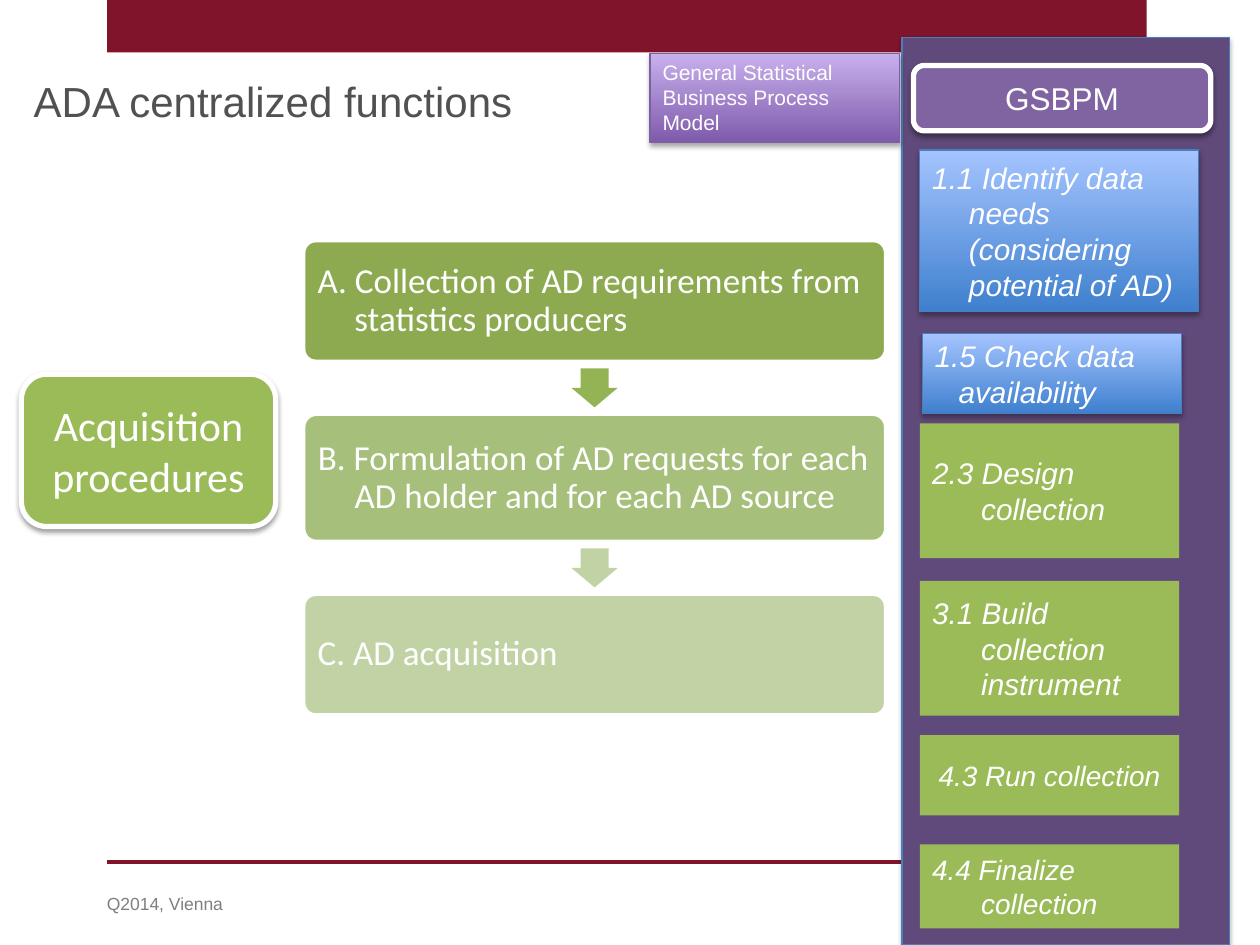
import pptx
import pptx.util
import pptx.dml.color
import pptx.enum.shapes
import pptx.enum.text
import pptx.oxml
import pptx.oxml.ns
import lxml.etree

Pt = pptx.util.Pt
Kind = pptx.enum.shapes.MSO_SHAPE
Anchor = pptx.enum.text.MSO_ANCHOR
Align = pptx.enum.text.PP_ALIGN
qn = pptx.oxml.ns.qn


class Theme:
    wine = "7F142A"
    white = "FFFFFF"
    plum = "604A7B"
    violet = "8064A2"
    edge = "4B7EBC"
    rim = "7D60A0"
    green = "9BBB59"
    ink = "505150"
    gray = "7F7F7F"
    blue = ("3F80CE", "A4C4FF")
    lilac = ("7F5BAB", "C8B0ED")
    steps = ("8DAA51", "A6BF7A", "C1D3A5")
    arrows = ("94B355", "C1D3A4")
    sans = "Arial"
    body = "Calibri"
    head, step, label, large, small, note, foot = 24, 20, 18, 17, 16, 12, 10


def color(code):
    return pptx.dml.color.RGBColor.from_string(code)


def box(area, fill=None, line=None, width=0.75, shade=0, kind=Kind.RECTANGLE,
        text="", size=12, font=Theme.sans, ink=Theme.white, hang=0,
        align=Align.LEFT, anchor=Anchor.MIDDLE, italic=False):
    left, top, wide, high = map(Pt, area)
    if fill:
        shape = shapes.add_shape(kind, left, top, wide, high)
        if isinstance(fill, tuple):
            shape.fill.gradient()
            shape.fill.gradient_angle = 90
            for stop, code in zip(shape.fill.gradient_stops, fill):
                stop.color.rgb = color(code)
        else:
            shape.fill.solid()
            shape.fill.fore_color.rgb = color(fill)
        if line:
            shape.line.color.rgb = color(line)
            shape.line.width = Pt(width)
        else:
            shape.line.fill.background()
        shape.shadow.inherit = False
    else:
        shape = shapes.add_textbox(left, top, wide, high)
    if shade:
        effects = shape._element.spPr.find(qn("a:effectLst"))
        glow = lxml.etree.SubElement(
            effects, qn("a:outerShdw"), blurRad=str(Pt(3.1)),
            dist=str(Pt(1.8)), dir="5400000", rotWithShape="0")
        tone = lxml.etree.SubElement(glow, qn("a:srgbClr"), val="000000")
        lxml.etree.SubElement(tone, qn("a:alpha"), val=str(shade * 1000))
    if text:
        frame = shape.text_frame
        frame.word_wrap = True
        frame.vertical_anchor = anchor
        para = frame.paragraphs[0]
        para.text = text
        para.alignment = align
        if hang:
            props = para._p.get_or_add_pPr()
            props.set("marL", str(Pt(hang)))
            props.set("indent", str(-Pt(hang)))
        para.font.name = font
        para.font.size = Pt(size)
        para.font.italic = italic
        para.font.color.rgb = color(ink)
    return shape


deck = pptx.Presentation()
deck.slide_width, deck.slide_height = Pt(720), Pt(540)
shapes = deck.slides.add_slide(deck.slide_layouts[6]).shapes

box((61.2, 0, 594, 30), Theme.wine)
rule = shapes.add_connector(pptx.enum.shapes.MSO_CONNECTOR.STRAIGHT,
                            Pt(61.2), Pt(492.5), Pt(655.2), Pt(492.5))
rule.line.color.rgb = color(Theme.wine)
rule.line.width = Pt(2)
lxml.etree.SubElement(rule._element.spPr, qn("a:effectLst"))

box((515.5, 21.6, 187.2, 518.4), Theme.plum, Theme.edge, shade=35)
box((12.2, 39.6, 316.8, 36), text="ADA centralized functions",
    size=Theme.head, ink=Theme.ink, anchor=Anchor.TOP)

steps = [
    ("A. Collection of AD requirements from statistics producers", 69),
    ("B. Formulation of AD requests for each AD holder and for each AD source", 72.7),
    ("C. AD acquisition", 69),
]
left, top, wide, gap = 173.5, 137.5, 332.6, 30.2
tip, drop = 26.6, 22.3
for rank, (text, high) in enumerate(steps):
    step = box((left, top, wide, high), Theme.steps[rank], Theme.white, 2,
               kind=Kind.ROUNDED_RECTANGLE, text=text, size=Theme.step,
               font=Theme.body, hang=21)
    step.adjustments[0] = 0.1
    frame = step.text_frame
    frame.margin_left = frame.margin_right = Pt(6)
    frame.margin_top = frame.margin_bottom = Pt(6)
    frame.paragraphs[0].line_spacing = 0.9
    top += high
    if rank < len(Theme.arrows):
        arrow = box((left + (wide - tip) / 2, top + (gap - drop) / 2, tip, drop),
                    Theme.arrows[rank], kind=Kind.DOWN_ARROW)
        arrow.adjustments[0] = 0.6
        arrow.adjustments[1] = 0.5
    top += gap

box((12.2, 213.8, 145.4, 87.1), Theme.green, Theme.white, 3, 38,
    Kind.ROUNDED_RECTANGLE, "Acquisition procedures", Theme.head, Theme.body,
    align=Align.CENTER)
box((522, 37.4, 169.9, 37.4), Theme.violet, Theme.white, 3, 38,
    Kind.ROUNDED_RECTANGLE, "GSBPM", Theme.label, align=Align.CENTER)

needs = [
    ((525.6, 85.7, 159.1, 92.2), "1.1 Identify data needs (considering potential of AD)", 21),
    ((527, 190.8, 148.3, 45.4), "1.5 Check data availability", 13.7),
]
for area, text, hang in needs:
    box(area, Theme.blue, Theme.edge, shade=35, text=text, size=Theme.large,
        hang=hang, italic=True)

tasks = [
    (242, 77, "2.3 Design collection", Theme.large, 28, Align.LEFT),
    (332, 77, "3.1 Build collection instrument", Theme.large, 28, Align.LEFT),
    (420, 46, "4.3 Run collection", Theme.small, 0, Align.CENTER),
    (482.5, 48, "4.4 Finalize collection", Theme.small, 28, Align.LEFT),
]
for top, high, text, size, hang, align in tasks:
    box((525.6, top, 148.3, high), Theme.green, text=text, size=size,
        hang=hang, align=align, italic=True)

box((371.5, 30.4, 142.6, 51.1), Theme.lilac, Theme.rim, shade=35,
    text="General Statistical Business Process Model", size=Theme.note,
    anchor=Anchor.TOP)
box((54, 506.9, 133.2, 19.4), text="Q2014, Vienna", size=Theme.foot,
    ink=Theme.gray, anchor=Anchor.TOP)

deck.save("out.pptx")
